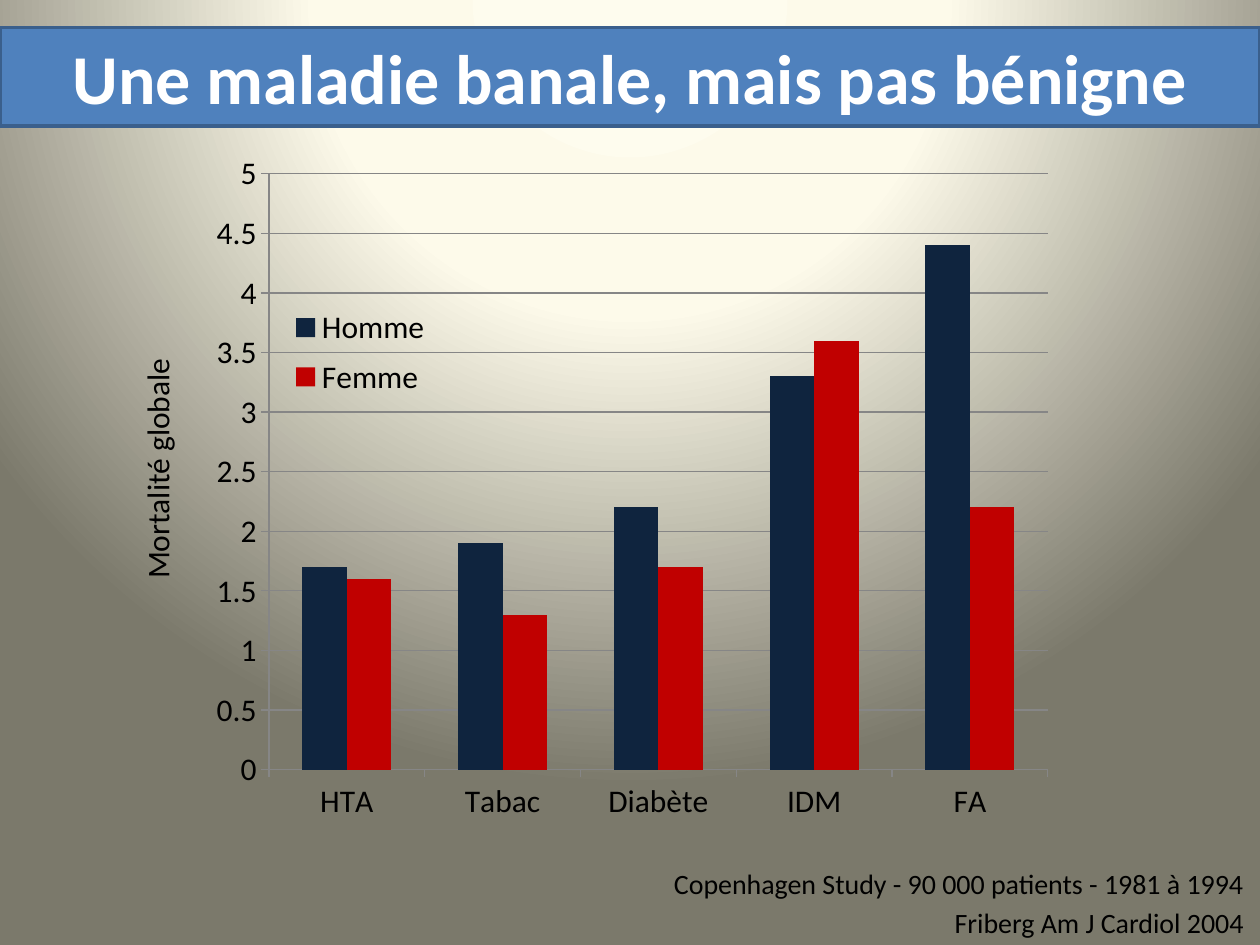
from pptx import Presentation
from pptx.chart.data import CategoryChartData
from pptx.dml.color import RGBColor
from pptx.enum.chart import XL_CHART_TYPE, XL_LEGEND_POSITION, XL_TICK_MARK
from pptx.enum.shapes import MSO_SHAPE
from pptx.enum.text import MSO_ANCHOR, PP_ALIGN
from pptx.oxml import parse_xml
from pptx.oxml.ns import nsdecls, qn
from pptx.util import Inches, Pt


def rgb(hex_code):
    return RGBColor.from_string(hex_code)


def style_font(font, size, color, bold=False):
    font.name = "Calibri"
    font.size = Pt(size)
    font.bold = bold
    font.color.rgb = rgb(color)


def write(frame, text, size=18, color="000000", bold=False,
          align=PP_ALIGN.CENTER, line_spacing=None, space_before=None):
    frame.word_wrap = True
    for index, line in enumerate(text.split("\n")):
        paragraph = frame.add_paragraph() if index else frame.paragraphs[0]
        paragraph.alignment = align
        paragraph.line_spacing = line_spacing
        paragraph.space_before = space_before
        run = paragraph.add_run()
        run.text = line
        style_font(run.font, size, color, bold)


def place_layout(part, inner=False, **fractions):
    """Give a chart part a manual layout, in fractions of the chart."""
    target = '<c:layoutTarget val="inner"/>' if inner else ""
    modes = "".join(f'<c:{axis}Mode val="edge"/>' for axis in "xy")
    values = "".join(f'<c:{key} val="{value}"/>' for key, value in fractions.items())
    layout = parse_xml(f"<c:layout {nsdecls('c')}><c:manualLayout>{target}{modes}{values}"
                       "</c:manualLayout></c:layout>")
    for old in part.findall(qn("c:layout")):
        part.remove(old)
    position = 1 if part.find(qn("c:legendPos")) is not None else 0
    part.insert(position, layout)


class SlideBuilder:
    BLUE, BLUE_EDGE, GRID = "4F81BD", "3A5F8C", "868686"

    def __init__(self, slide):
        self.slide = slide

    def background(self, stops):
        self.slide.background.fill.solid()
        solid = self.slide.element.find(".//" + qn("a:solidFill"))
        stop_xml = "".join(f'<a:gs pos="{pos * 1000}"><a:srgbClr val="{color}"/></a:gs>'
                           for pos, color in stops)
        gradient = parse_xml(
            f'<a:gradFill {nsdecls("a")} rotWithShape="1"><a:gsLst>{stop_xml}</a:gsLst>'
            '<a:path path="circle"><a:fillToRect l="50000" t="-80000" r="50000" b="180000"/>'
            "</a:path></a:gradFill>")
        solid.getparent().replace(solid, gradient)

    def text(self, text, left, top, width, height, rotation=0, **format_options):
        box = self.slide.shapes.add_textbox(
            Inches(left), Inches(top), Inches(width), Inches(height))
        box.rotation = rotation
        write(box.text_frame, text, **format_options)

    def banner(self, text, left, top, width, height):
        bar = self.slide.shapes.add_shape(
            MSO_SHAPE.RECTANGLE, Inches(left), Inches(top), Inches(width), Inches(height))
        bar.shadow.inherit = False
        bar.fill.solid()
        bar.fill.fore_color.rgb = rgb(self.BLUE)
        bar.line.color.rgb = rgb(self.BLUE_EDGE)
        bar.line.width = Pt(2)
        bar.text_frame.vertical_anchor = MSO_ANCHOR.MIDDLE
        write(bar.text_frame, text, size=40, color="FFFFFF", bold=True)

    def column_chart(self, categories, series, left, top, width, height):
        data = CategoryChartData()
        data.categories = categories
        for name, _, values in series:
            data.add_series(name, values)
        chart = self.slide.shapes.add_chart(
            XL_CHART_TYPE.COLUMN_CLUSTERED, Inches(left), Inches(top),
            Inches(width), Inches(height), data).chart
        style_font(chart.font, 18, "000000")
        chart.has_title = False

        # Columns
        plot = chart.plots[0]
        plot.gap_width = 150
        plot.overlap = 0
        plot.vary_by_categories = False
        for column, (_, color, _) in zip(plot.series, series):
            column.format.fill.solid()
            column.format.fill.fore_color.rgb = rgb(color)
        place_layout(chart.element.find(".//" + qn("c:plotArea")), inner=True,
                     x=0.091, y=0.048, w=0.887, h=0.84)

        # Axes
        value_axis = chart.value_axis
        value_axis.minimum_scale, value_axis.maximum_scale = 0, 5
        value_axis.major_unit = 0.5
        value_axis.has_major_gridlines = True
        for axis in (chart.category_axis, value_axis):
            axis.major_tick_mark = XL_TICK_MARK.OUTSIDE
            axis.format.line.color.rgb = rgb(self.GRID)
        value_axis.major_gridlines.format.line.color.rgb = rgb(self.GRID)

        # Legend
        chart.has_legend = True
        chart.legend.position = XL_LEGEND_POSITION.TOP
        chart.legend.include_in_layout = False
        place_layout(chart.element.find(".//" + qn("c:legend")),
                     x=0.11, y=0.222, w=0.17, h=0.155)


def main():
    deck = Presentation()
    deck.slide_width, deck.slide_height = Inches(10), Inches(7.5)
    builder = SlideBuilder(deck.slides.add_slide(deck.slide_layouts[6]))
    builder.background([(0, "FEFCEE"), (40, "FDFAEA"), (100, "7B796B")])

    # Study reference
    builder.text("Copenhagen Study - 90 000 patients - 1981 à 1994\nFriberg Am J Cardiol 2004",
                 1.93, 6.86, 8.04, 0.67, size=16, align=PP_ALIGN.RIGHT,
                 line_spacing=0.9, space_before=Pt(4.8))

    # Title
    builder.banner("Une maladie banale, mais pas bénigne", 0, 0.22, 10, 0.78)

    # Mortality by risk factor and sex
    builder.column_chart(
        ["HTA", "Tabac", "Diabète", "IDM", "FA"],
        [("Homme", "0F243E", [1.7, 1.9, 2.2, 3.3, 4.4]),
         ("Femme", "C00000", [1.6, 1.3, 1.7, 3.6, 2.2])],
        1.5, 1.11, 6.97, 5.63)
    builder.text("Mortalité globale", -1.2, 3.52, 4.89, 0.4, rotation=270)

    deck.save("out.pptx")


if __name__ == "__main__":
    main()
